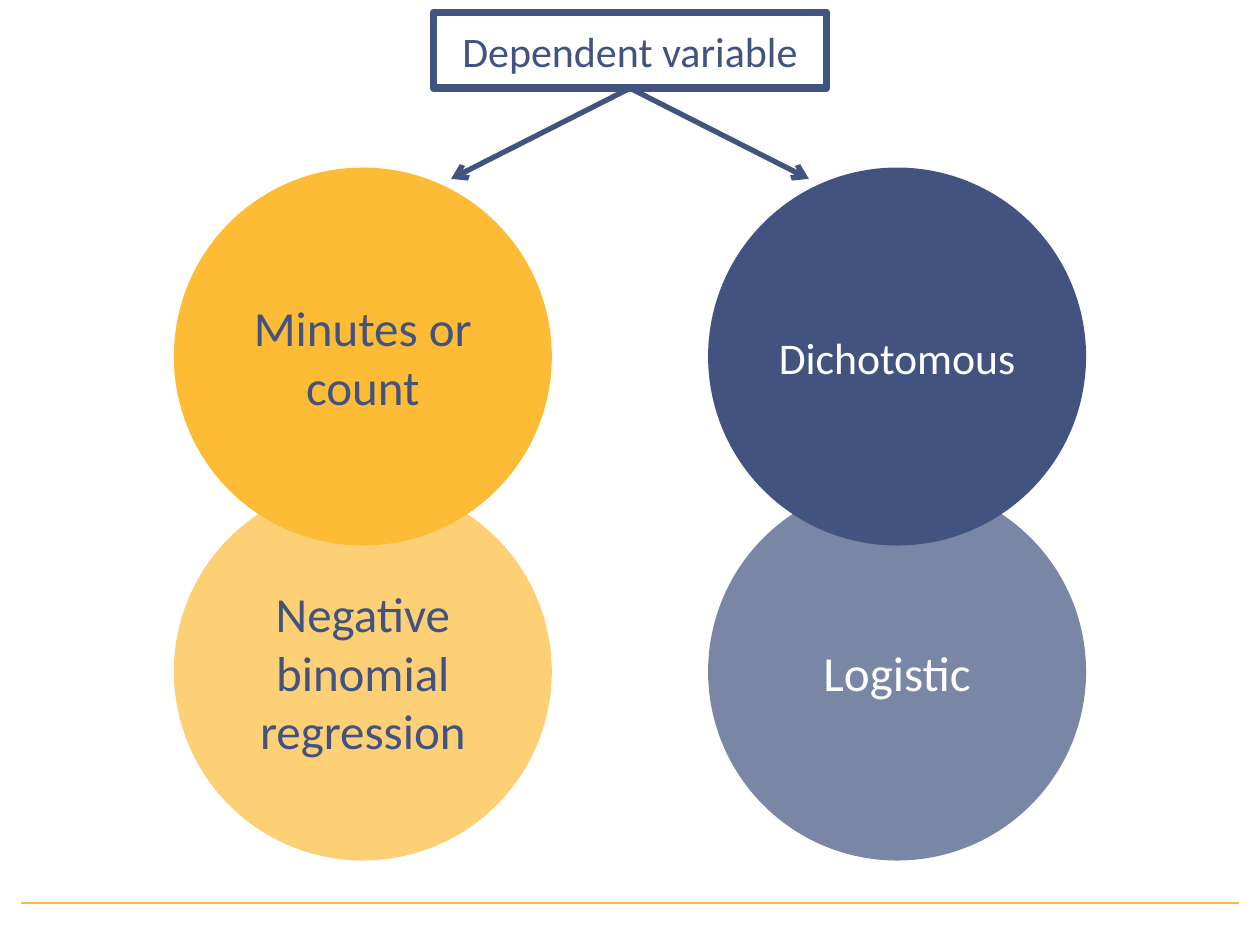
from lxml import etree
from pptx import Presentation
from pptx.dml import color
from pptx.enum import shapes, text
from pptx.oxml import ns
from pptx.util import Inches, Pt

COLORS = {"gold": "FEBB36", "navy": "42537F", "white": "FFFFFF"}
ROOT = "Dependent variable"
BRANCHES = [
    {"fill": "gold", "font": "navy", "alpha": 68,
     "circles": [("Minutes or count", 28), ("Negative binomial regression", 28)]},
    {"fill": "navy", "font": "white", "alpha": 70,
     "circles": [("Dichotomous", 25), ("Logistic", 28)]},
]
WIDTH, HEIGHT = 10, 7.5
CENTER = WIDTH / 2
DIAMETER = 3
COLUMN_OFFSET = 2.12
CIRCLE_TOP, CIRCLE_STEP = 1.33, 2.5
BOX_TOP, BOX_WIDTH, BOX_HEIGHT = 0.1, 3.12, 0.6
ARROW_REACH, ARROW_END = 1.42, 1.42
RULE_MARGIN, RULE_Y = 0.17, 7.17


def rgb(name):
    return color.RGBColor.from_string(COLORS[name])


def add_label(s, kind, label, size, font, left, top, width, height):
    sp = s.shapes.add_shape(kind, *map(Inches, (left, top, width, height)))
    sp.shadow.inherit = False
    tf = sp.text_frame
    tf.word_wrap = True
    tf.vertical_anchor = text.MSO_ANCHOR.MIDDLE
    p = tf.paragraphs[0]
    p.alignment = text.PP_ALIGN.CENTER
    r = p.add_run()
    r.text = label
    for name, value in {"name": "Calibri", "size": Pt(size)}.items():
        setattr(r.font, name, value)
    r.font.color.rgb = rgb(font)
    return sp


def add_line(s, start, end, name, width):
    line = s.shapes.add_connector(shapes.MSO_CONNECTOR.STRAIGHT,
                                  *map(Inches, (*start, *end)))
    line.line.color.rgb = rgb(name)
    line.line.width = Pt(width)
    etree.SubElement(line._element.spPr, ns.qn("a:effectLst"))
    return line


def add_circle(s, branch, column, row):
    label, size = branch["circles"][row]
    left = CENTER + (2 * column - 1) * COLUMN_OFFSET - DIAMETER / 2
    sp = add_label(s, shapes.MSO_SHAPE.OVAL, label, size, branch["font"],
                   left, CIRCLE_TOP + row * CIRCLE_STEP, DIAMETER, DIAMETER)
    sp.fill.solid()
    sp.fill.fore_color.rgb = rgb(branch["fill"])
    sp.line.fill.background()
    if row:
        fill = sp._element.spPr.find(ns.qn("a:solidFill"))
        etree.SubElement(fill[0], ns.qn("a:alpha"), val=str(branch["alpha"] * 1000))


def main():
    prs = Presentation()
    prs.slide_width, prs.slide_height = Inches(WIDTH), Inches(HEIGHT)
    s = prs.slides.add_slide(prs.slide_layouts[6])
    add_line(s, (WIDTH - RULE_MARGIN, RULE_Y), (RULE_MARGIN, RULE_Y), "gold", 1.25)

    for row in range(2):
        for column, branch in enumerate(BRANCHES):
            add_circle(s, branch, column, row)

    box = add_label(s, shapes.MSO_SHAPE.RECTANGLE, ROOT, 24, "navy",
                    CENTER - BOX_WIDTH / 2, BOX_TOP, BOX_WIDTH, BOX_HEIGHT)
    box.fill.background()
    box.line.color.rgb = rgb("navy")
    box.line.width = Pt(4.5)

    for side in (-1, 1):
        arrow = add_line(s, (CENTER, BOX_TOP + BOX_HEIGHT),
                         (CENTER + side * ARROW_REACH, ARROW_END), "navy", 3)
        arrow.begin_connect(box, 2)
        etree.SubElement(arrow.line._get_or_add_ln(), ns.qn("a:tailEnd"), type="arrow")

    prs.save("out.pptx")


if __name__ == "__main__":
    main()
